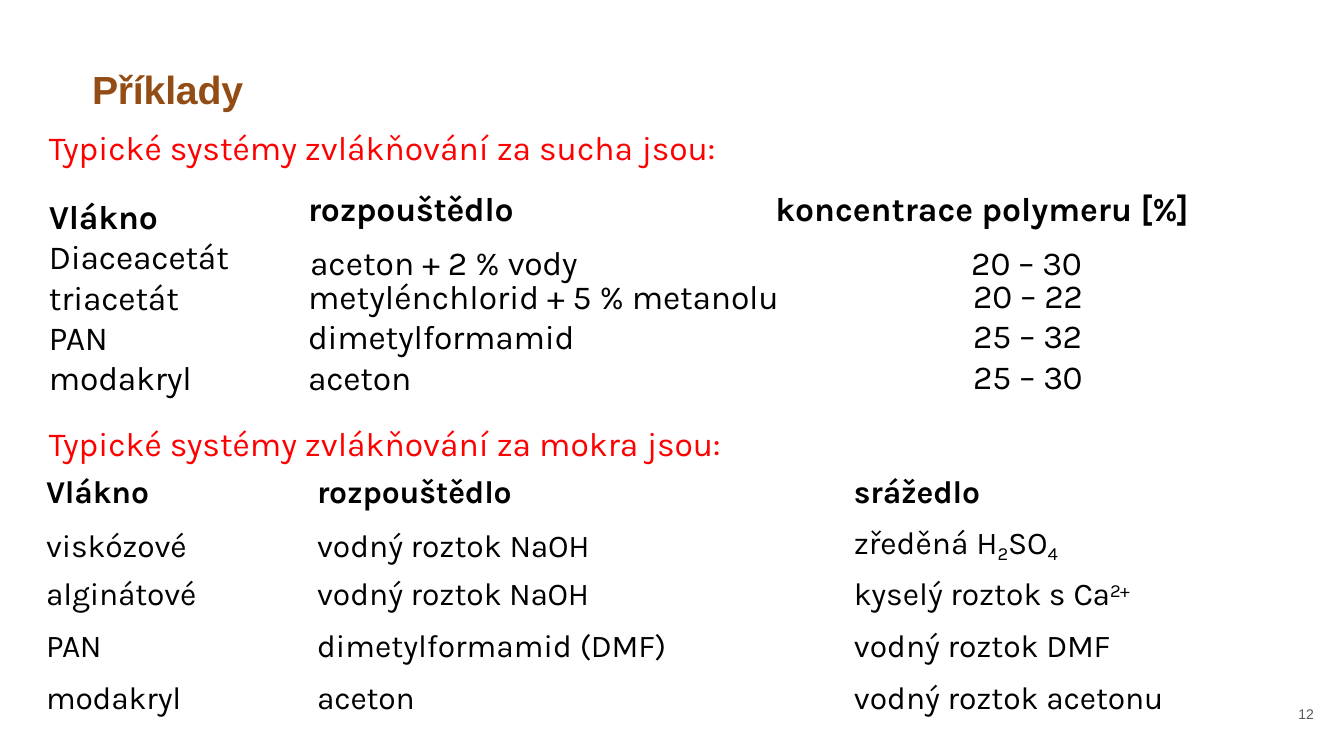
import dataclasses

import pptx
import pptx.dml.color
import pptx.enum.text
import pptx.util

PX = 914400 / 134.4
COLORS = {"title": "924C14", "heading": "FF0000", "text": "000000", "number": "585858"}
ALIGN = pptx.enum.text.PP_ALIGN
ANCHOR = pptx.enum.text.MSO_ANCHOR
FIT = pptx.enum.text.MSO_AUTO_SIZE.SHAPE_TO_FIT_TEXT
NO_STYLE = "{2D5ABB26-0587-4C30-8999-92F81FD0307C}"


@dataclasses.dataclass
class Span:
    text: str
    tracking: int = 0  # hundredths of a point
    bold: bool = False
    baseline: int = 0  # percent


@dataclasses.dataclass
class Line:
    spans: list
    indent: int = 0
    align: int = ALIGN.LEFT
    leading: float = 1.0  # lines, or points when above 2


def px(length):
    return pptx.util.Emu(round(length * PX))


def write(frame, lines, color="text", size=18, name="Karla"):
    """Fill a text frame with formatted lines."""
    for index, line in enumerate(lines):
        para = frame.paragraphs[0] if index == 0 else frame.add_paragraph()
        leading = pptx.util.Pt(line.leading) if line.leading > 2 else line.leading
        formats = {"alignment": line.align, "line_spacing": leading,
                   "space_before": pptx.util.Pt(0)}
        for key, value in formats.items():
            setattr(para, key, value)
        properties = para._p.get_or_add_pPr()
        properties.set("marL", str(px(line.indent)))
        properties.set("indent", "0")
        for part in line.spans:
            span = para.add_run()
            span.text = part.text
            formats = {"name": name, "size": pptx.util.Pt(size), "bold": part.bold}
            for key, value in formats.items():
                setattr(span.font, key, value)
            span.font.color.rgb = pptx.dml.color.RGBColor.from_string(COLORS[color])
            marks = {"spc": part.tracking, "baseline": part.baseline * 1000}
            for key, value in marks.items():
                if value:
                    span._r.get_or_add_rPr().set(key, str(value))


def set_frame(frame, top=0, side=0, bottom=0, wrap=True, anchor=ANCHOR.TOP):
    formats = {"margin_left": px(side), "margin_right": px(side), "margin_top": px(top),
               "margin_bottom": px(bottom), "word_wrap": wrap, "auto_size": FIT,
               "vertical_anchor": anchor}
    for key, value in formats.items():
        setattr(frame, key, value)


def add_text(page, box, lines, **style):
    frame = page.shapes.add_textbox(*map(px, box)).text_frame
    set_frame(frame, top=2)
    write(frame, lines, **style)


def place_title(page, box):
    title = page.shapes.title
    for key, value in zip(("left", "top", "width", "height"), box):
        setattr(title, key, px(value))
    set_frame(title.text_frame)
    write(title.text_frame, [Line([Span("Příklady", -10, True)], 2)],
          color="title", size=21, name="Arial")


def place_heading(page, box, method):
    spans = [Span(f"Typické systémy zvlákňování za {method} "), Span("jsou:", -10)]
    add_text(page, box, [Line(spans, 2)], color="heading")


def place_dry_systems(page, box):
    left, top = box[:2]
    # Fibres
    add_text(page, (left, top + 21, 234, 212), [
        Line([Span("Vlákno ", -10, True), Span("Diaceacetát triacetát", -10)], 2),
        Line([Span("PAN", -20)], 2),
        Line([Span("modakryl", -10)], 2)])
    # Solvents
    add_text(page, (left + 259, top, 390, 105), [
        Line([Span("rozpouštědlo", -10, True)], 2, leading=28.8),
        Line([Span("aceton + 2 % "), Span("vody", -20)], 4, leading=28.8)])
    add_text(page, (left + 259, top + 101, 633, 124), [
        Line([Span("metylénchlorid + 5 %"), Span(" metanolu dimetylformamid", -10)], 2),
        Line([Span("aceton", -10)], 2)])
    # Concentrations
    add_text(page, (left + 628, top, 614, 105), [
        Line([Span("koncentrace polymeru", bold=True), Span(" [%]", -20, True)],
             align=ALIGN.CENTER, leading=28.8),
        Line([Span("20 – "), Span("30", -20)], 89, ALIGN.CENTER, 28.8)])
    ranges = (("20", "22"), ("25", "32"), ("25", "30"))
    add_text(page, (left + 926, top + 100, 163, 124),
             [Line([Span(f"{low} – "), Span(high, -20)]) for low, high in ranges])


def place_wet_systems(page, box):
    rows = [
        [[Span(text, -10, True)] for text in ("Vlákno", "rozpouštědlo", "srážedlo")],
        [[Span("viskózové", -10)],
         [Span("vodný roztok "), Span("NaOH", -20)],
         [Span("zředěná "), Span("H", -20), Span("2", -30, baseline=-21),
          Span("SO", -20), Span("4", -30, baseline=-21)]],
        [[Span("alginátové", -10)],
         [Span("vodný roztok"), Span(" NaOH", -20)],
         [Span("kyselý roztok s "), Span("Ca", -20), Span("2+", -30, baseline=24)]],
        [[Span("PAN", -20)],
         [Span("dimetylformamid "), Span("(DMF)", -10)],
         [Span("vodný roztok "), Span("DMF", -20)]],
        [[Span("modakryl", -10)],
         [Span("aceton", -10)],
         [Span("vodný roztok "), Span("acetonu", -10)]],
    ]
    widths, indents = (241, 536, 465), (4, 34, 35)
    heights, leadings = (43, 47, 40, 47, 42), (27.9, 28.7, 25.6, 27.8, 27.9)
    table = page.shapes.add_table(len(rows), len(widths), *map(px, box)).table
    table.first_row = table.horz_banding = False
    table._tbl.tblPr[0].text = NO_STYLE
    for column, width in zip(table.columns, widths):
        column.width = px(width)
    for r, (row, height, leading) in enumerate(zip(rows, heights, leadings)):
        table.rows[r].height = px(height)
        for c, (spans, indent) in enumerate(zip(row, indents)):
            cell = table.cell(r, c)
            cell.fill.background()
            for side in ("left", "right", "top", "bottom"):
                setattr(cell, f"margin_{side}", 0)
            write(cell.text_frame, [Line(spans, indent, leading=leading)], size=17)


def place_page_number(page, box):
    frame = page.shapes.add_textbox(*map(px, box)).text_frame
    set_frame(frame, 13, 13, 13, wrap=False, anchor=ANCHOR.MIDDLE)
    write(frame, [Line([Span("12")], align=ALIGN.RIGHT)],
          color="number", size=7.5, name="Arial")


def main():
    deck = pptx.Presentation()
    deck.slide_width, deck.slide_height = px(1344), px(756)
    page = deck.slides.add_slide(deck.slide_layouts[5])
    place_page_number(page, (1284, 692, 43, 44))
    place_title(page, (90, 65, 1156, 47))
    place_heading(page, (47, 125, 870, 43), "sucha")
    place_dry_systems(page, (47, 173, 1242, 233))
    place_heading(page, (47, 421, 879, 43), "mokra")
    place_wet_systems(page, (42, 460, 1242, 219))
    deck.save("out.pptx")


if __name__ == "__main__":
    main()
